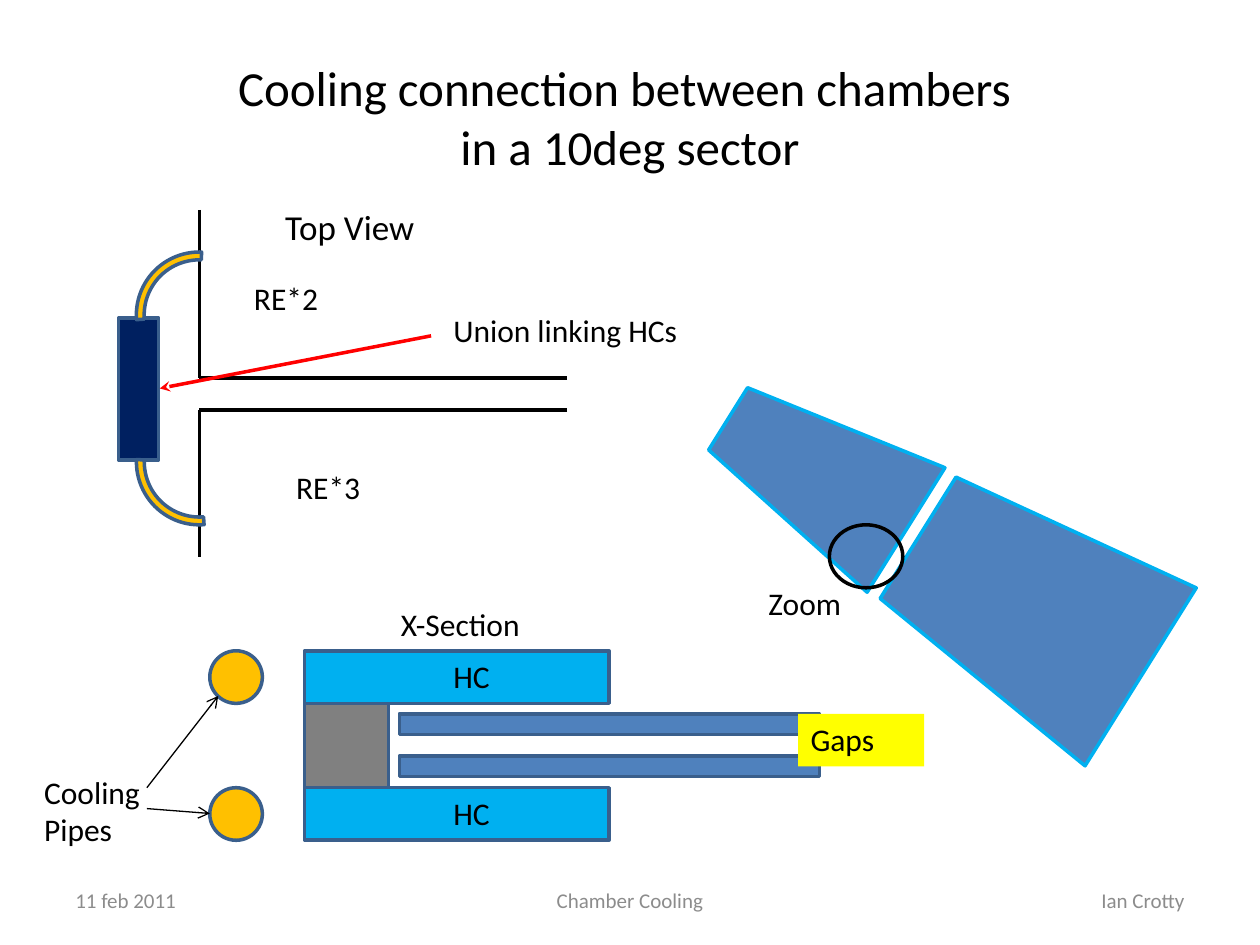
from lxml import etree
from pptx import Presentation
from pptx.dml.color import RGBColor
from pptx.enum import shapes, text
from pptx.oxml.ns import qn
from pptx.util import Cm, Pt

BLACK = RGBColor(0x00, 0x00, 0x00)
FOOTER_GREY = RGBColor(0x8C, 0x8C, 0x8C)
CHAMBER_BLUE = RGBColor(0x4F, 0x81, 0xBD)
SKY_BLUE = RGBColor(0x00, 0xB0, 0xF0)
OUTLINE_BLUE = RGBColor(0x3A, 0x5F, 0x8C)
NAVY = RGBColor(0x00, 0x20, 0x60)
PIPE_GOLD = RGBColor(0xFF, 0xC0, 0x00)
SPACER_GREY = RGBColor(0x80, 0x80, 0x80)
YELLOW = RGBColor(0xFF, 0xFF, 0x00)
RED = RGBColor(0xFF, 0x00, 0x00)

KIND = shapes.MSO_SHAPE
ALIGN = text.PP_ALIGN
ANCHOR = text.MSO_ANCHOR


def place(box, left, top):
    return Cm(box[0] + left), Cm(box[1] + top)


def add_label(slide, box, at, wording, size=18, color=BLACK,
              align=ALIGN.LEFT, anchor=ANCHOR.TOP):
    left, top, width, height = at
    label = slide.shapes.add_textbox(*place(box, left, top), Cm(width), Cm(height))
    frame = label.text_frame
    frame.word_wrap = True
    frame.vertical_anchor = anchor
    frame.text = wording
    paragraph = frame.paragraphs[0]
    paragraph.alignment = align
    for run in paragraph.runs:
        run.font.name = "Calibri"
        run.font.size = Pt(size)
        run.font.color.rgb = color
    return label


def add_part(parent, box, kind, at, fill=None, outline=OUTLINE_BLUE, adjust=()):
    left, top, width, height = at
    part = parent.shapes.add_shape(kind, *place(box, left, top), Cm(width), Cm(height))
    part.shadow.inherit = False
    if fill is None:
        part.fill.background()
    else:
        part.fill.solid()
        part.fill.fore_color.rgb = fill
    part.line.color.rgb = outline
    part.line.width = Pt(2)
    for index, value in enumerate(adjust):
        part.adjustments[index] = value
    return part


def add_line(slide, box, start, end, color=BLACK, width=2, arrow=None):
    line = slide.shapes.add_connector(
        shapes.MSO_CONNECTOR.STRAIGHT, *place(box, *start), *place(box, *end))
    line.line.color.rgb = color
    line.line.width = Pt(width)
    properties = line.element.spPr
    if arrow:
        etree.SubElement(properties.find(qn("a:ln")), qn("a:tailEnd"), type=arrow)
    etree.SubElement(properties, qn("a:effectLst"))


def add_title(slide, box):
    add_label(slide, box, (0, 0, 22.86, 3.18),
              "Cooling connection between chambers \vin a 10deg sector",
              28, align=ALIGN.CENTER, anchor=ANCHOR.MIDDLE)


def add_footer(slide, box):
    for left, width, wording, align in (
            (0, 5.93, "11 feb 2011", ALIGN.LEFT),
            (7.41, 8.04, "Chamber Cooling", ALIGN.CENTER),
            (16.93, 5.93, "Ian Crotty", ALIGN.RIGHT)):
        add_label(slide, box, (left, 0, width, 1.01), wording, 12,
                  FOOTER_GREY, align, ANCHOR.MIDDLE)


def add_sector(slide, box):
    sector = slide.shapes.add_group_shape()
    for at, taper in (((2.36, 0.14, 2.96, 4.23), 0.25),
                      ((1.72, 4.66, 4.23, 5.29), 0.159)):
        add_part(sector, box, KIND.TRAPEZOID, at, CHAMBER_BLUE, SKY_BLUE, [taper])
    sector.rotation = 302
    add_part(slide, box, KIND.OVAL, (1.72, 4.58, 1.48, 1.27), outline=BLACK)
    add_label(slide, box, (0.24, 5.64, 2.75, 1.02), "Zoom")


def add_cross_section(slide, box):
    rows = (1.12, 3.88)
    depth = 1.06
    for top in rows:
        add_part(slide, box, KIND.RECTANGLE, (5.54, top, 6.14, depth), SKY_BLUE)
    add_part(slide, box, KIND.RECTANGLE, (5.54, 2.18, 2.14, 1.7)[:2] + (1.69, 1.7),
             SPACER_GREY)
    for top in rows:
        add_part(slide, box, KIND.OVAL, (3.63, top, depth, depth), PIPE_GOLD)
    for top in (2.39, 3.24):
        add_part(slide, box, KIND.RECTANGLE, (7.45, top, 8.47, 0.42), CHAMBER_BLUE)
    gaps = add_label(slide, box, (15.49, 2.39, 2.54, depth), "Gaps")
    gaps.fill.solid()
    gaps.fill.fore_color.rgb = YELLOW
    for top in rows:
        add_label(slide, box, (8.29, top, 1.69, depth), "HC")
    add_label(slide, box, (0.04, 3.45, 3.18, 1.8), "Cooling Pipes")
    for start, end in (((2.36, 3.88), (3.8, 2.03)), ((2.36, 4.3), (3.63, 4.4))):
        add_line(slide, box, start, end, width=0.75, arrow="arrow")
    add_label(slide, box, (7.23, 0.07, 3.18, depth), "X-Section")


def add_top_view(slide, box):
    wall, far_end = 2.02, 9.43
    for edge, outer in ((3.62, 0.23), (4.26, 7.22)):
        add_line(slide, box, (wall, outer), (wall, edge))
        add_line(slide, box, (far_end, edge), (wall, edge))
    add_label(slide, box, (2.87, 1.5, 3.81, 1.02), "RE*2")
    add_label(slide, box, (3.72, 5.31, 3.81, 1.02), "RE*3")
    add_label(slide, box, (6.89, 2.14, 5.72, 1.02), "Union linking HCs")
    add_part(slide, box, KIND.RECTANGLE, (0.39, 2.41, 0.81, 2.86), NAVY)
    for top, turn in ((4.04, 180), (1.08, 270)):
        bend = add_part(slide, box, KIND.BLOCK_ARC, (0.75, top, 2.54, 2.54),
                        PIPE_GOLD, adjust=(159.458, 1.227, 0.062))
        bend.rotation = turn
    add_label(slide, box, (3.5, 0.02, 3.18, 1.12), "Top View", 20)
    add_line(slide, box, (6.69, 2.77), (1.22, 3.83), RED, arrow="stealth")


def main():
    deck = Presentation()
    deck.slide_width, deck.slide_height = Cm(25.4), Cm(19.05)
    slide = deck.slides.add_slide(deck.slide_layouts[6])
    add_title(slide, (1.27, 0.76))
    add_footer(slide, (1.27, 17.65))
    add_sector(slide, (15, 6))
    add_cross_section(slide, (0.6, 12))
    add_top_view(slide, (2, 4))
    deck.save("out.pptx")


if __name__ == "__main__":
    main()
